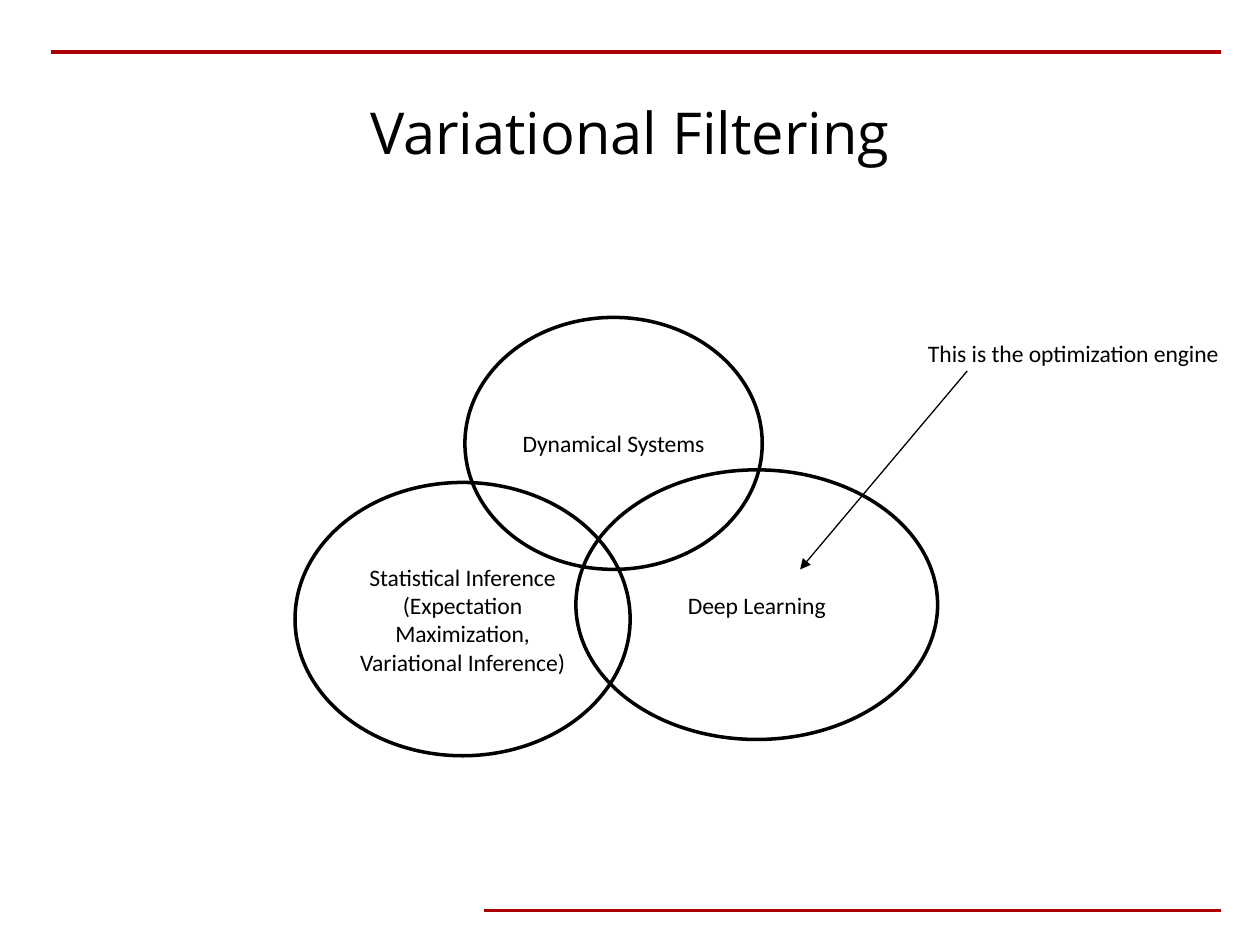
from lxml import etree
from pptx import Presentation
from pptx import util as u
from pptx.dml.color import RGBColor
from pptx.enum import shapes, text
from pptx.oxml import ns

Pt = u.Pt
COLORS = {"ink": "000000", "rule": "AC0004"}
BODY_FONT = "Calibri"
RULE_RIGHT = 697.7


def rgb(name):
    return RGBColor.from_string(COLORS[name])


def style(paragraph, size, font_name, align):
    paragraph.alignment = align
    paragraph.font.size = Pt(size)
    paragraph.font.name = font_name
    paragraph.font.color.rgb = rgb("ink")


def add_title(slide, wording):
    title = slide.shapes.title
    title.left, title.top, title.width, title.height = Pt(36), Pt(38.9), Pt(648), Pt(72.7)
    title.text_frame.text = wording
    title.text_frame.vertical_anchor = text.MSO_ANCHOR.MIDDLE
    style(title.text_frame.paragraphs[0], 33, "Open Sans", text.PP_ALIGN.CENTER)


def add_line(slide, start, end, color, width, arrow=False):
    line = slide.shapes.add_connector(
        shapes.MSO_CONNECTOR.STRAIGHT, *(Pt(v) for v in (*start, *end)))
    line.line.color.rgb = rgb(color)
    line.line.width = Pt(width)
    if arrow:
        etree.SubElement(line.line._get_or_add_ln(), ns.qn("a:tailEnd"), type="triangle")
    etree.SubElement(line._element.spPr, ns.qn("a:effectLst"))


def add_field(slide, box, lines):
    """Add one unfilled ellipse of the Venn diagram with its label."""
    field = slide.shapes.add_shape(shapes.MSO_SHAPE.OVAL, *(Pt(v) for v in box))
    field.shadow.inherit = False
    field.fill.background()
    field.line.color.rgb = rgb("ink")
    field.line.width = Pt(2)
    label = field.text_frame
    label.word_wrap = True
    label.vertical_anchor = text.MSO_ANCHOR.MIDDLE
    label.text = "\n".join(lines)
    for paragraph in label.paragraphs:
        style(paragraph, 13.5, BODY_FONT, text.PP_ALIGN.CENTER)


def add_note(slide, box, wording):
    note = slide.shapes.add_textbox(*(Pt(v) for v in box)).text_frame
    note.word_wrap = False
    note.auto_size = text.MSO_AUTO_SIZE.SHAPE_TO_FIT_TEXT
    note.text = wording
    style(note.paragraphs[0], 13.5, BODY_FONT, text.PP_ALIGN.LEFT)


def main():
    deck = Presentation()
    deck.slide_width, deck.slide_height = Pt(720), Pt(540)
    slide = deck.slides.add_slide(deck.slide_layouts.get_by_name("Title Only"))

    for left, y in ((276.5, 520.4), (29.4, 29.6)):
        add_line(slide, (left, y), (RULE_RIGHT, y), "rule", 2)
    add_title(slide, "Variational Filtering")

    fields = [
        ((168.6, 275.7, 191.5, 156.2),
         ["Statistical Inference", "(Expectation Maximization, Variational Inference)"]),
        ((329.1, 268.5, 206.7, 154.1), ["Deep Learning"]),
        ((265.7, 181.4, 169.9, 144), ["Dynamical Systems"]),
    ]
    for box, lines in fields:
        add_field(slide, box, lines)

    add_line(slide, (552.7, 212), (457.2, 325.4), "ink", 0.75, arrow=True)
    add_note(slide, (523.2, 190.1, 183.6, 23.8), "This is the optimization engine")
    deck.save("out.pptx")


if __name__ == "__main__":
    main()
